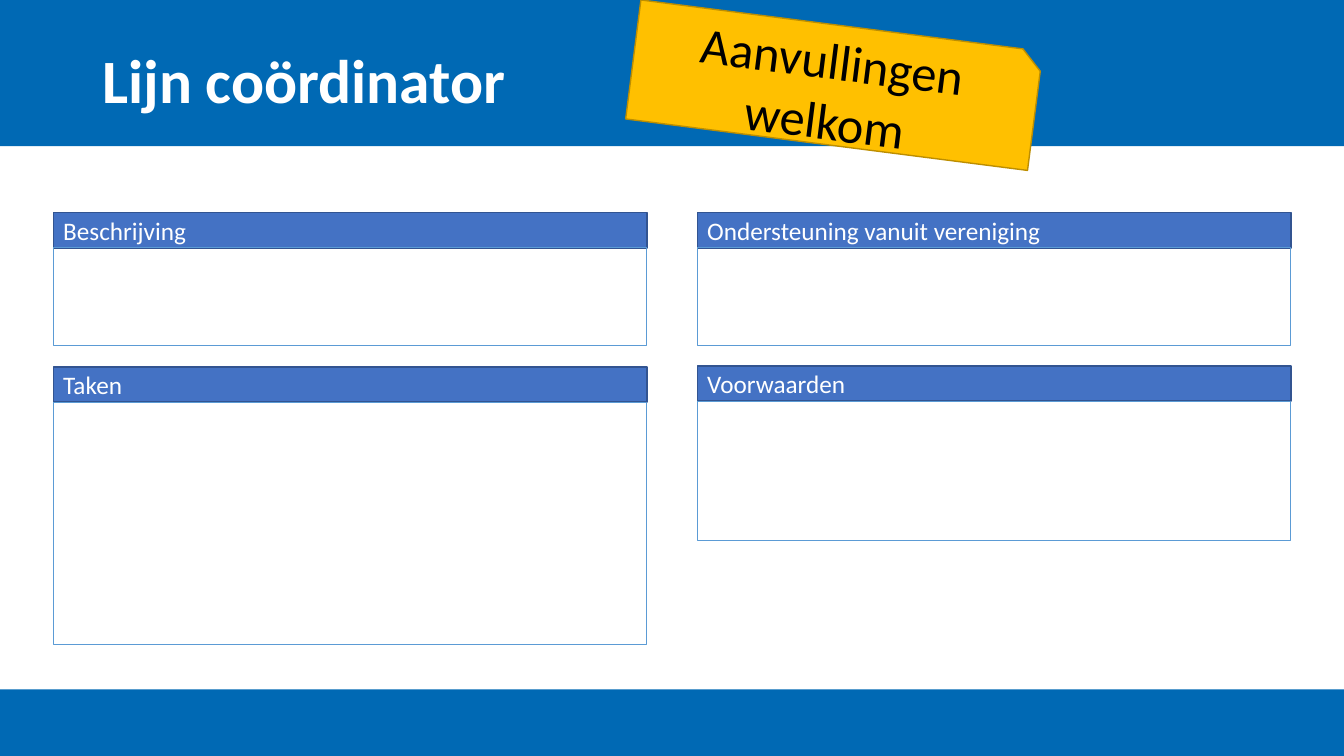
from dataclasses import dataclass

from pptx import Presentation
from pptx.dml.color import RGBColor
from pptx.enum.shapes import MSO_SHAPE as Shape
from pptx.enum.text import MSO_ANCHOR as Anchor, PP_ALIGN as Align
from pptx.util import Pt


@dataclass(frozen=True)
class Theme:
    font: str = "Calibri"
    band: str = "0069B4"
    header: str = "4472C4"
    header_line: str = "325491"
    body_line: str = "5B9BD5"
    note: str = "FFC000"
    note_line: str = "BD8E00"
    light: str = "FFFFFF"
    dark: str = "000000"
    title_size: float = 44
    note_size: float = 36
    header_size: float = 18


class SlideBuilder:
    def __init__(self, slide, theme):
        self.slide = slide
        self.theme = theme

    def set_text(self, shape, text, size, color, align=Align.LEFT, bold=False, line_spacing=1.0):
        frame = shape.text_frame
        frame.word_wrap = True
        frame.vertical_anchor = Anchor.MIDDLE
        paragraph = frame.paragraphs[0]
        paragraph.text = text
        paragraph.alignment = align
        paragraph.line_spacing = line_spacing
        formats = {"name": self.theme.font, "size": Pt(size), "bold": bold}
        for name, value in formats.items():
            setattr(paragraph.font, name, value)
        paragraph.font.color.rgb = RGBColor.from_string(color)

    def box(self, bounds, fill=None, line=None, line_width=1, kind=Shape.RECTANGLE):
        shape = self.slide.shapes.add_shape(kind, *map(Pt, bounds))
        shape.shadow.inherit = False
        if fill:
            shape.fill.solid()
            shape.fill.fore_color.rgb = RGBColor.from_string(fill)
        else:
            shape.fill.background()
        if line:
            shape.line.color.rgb = RGBColor.from_string(line)
            shape.line.width = Pt(line_width)
        else:
            shape.line.fill.background()
        return shape

    def title(self, text, bounds):
        shape = self.slide.shapes.add_textbox(*map(Pt, bounds))
        self.set_text(shape, text, self.theme.title_size, self.theme.light,
                      bold=True, line_spacing=0.9)

    def panel(self, heading, left, top, body_height, width=424, header_height=25.2):
        theme = self.theme
        header = self.box((left, top, width, header_height), theme.header, theme.header_line)
        self.set_text(header, heading, theme.header_size, theme.light)
        self.box((left, top + header_height, width, body_height),
                 line=theme.body_line, line_width=0.75)

    def note(self, text, bounds, rotation):
        theme = self.theme
        shape = self.box(bounds, theme.note, theme.note_line, kind=Shape.SNIP_1_RECTANGLE)
        shape.rotation = rotation
        self.set_text(shape, text, theme.note_size, theme.dark, Align.CENTER)


def main():
    presentation = Presentation()
    presentation.slide_width = Pt(960)
    presentation.slide_height = Pt(540)
    slide = presentation.slides.add_slide(presentation.slide_layouts[6])
    builder = SlideBuilder(slide, Theme())

    for top, height in ((0, 104.4), (492.5, 47.5)):
        builder.box((0, top, 960, height), builder.theme.band)
    builder.title("Lijn coördinator", (66, 28.8, 828, 61.2))

    left_column, right_column = 38.1, 498.1
    panels = (
        ("Beschrijving", left_column, 151.9, 69.8),
        ("Taken", left_column, 262.1, 172.8),
        ("Ondersteuning vanuit vereniging", right_column, 151.9, 69.8),
        ("Voorwaarden", right_column, 261.3, 99.4),
    )
    for panel in panels:
        builder.panel(*panel)

    builder.note("Aanvullingen welkom", (451.2, 18, 289.4, 85.7), 7.3)
    presentation.save("out.pptx")


if __name__ == "__main__":
    main()
